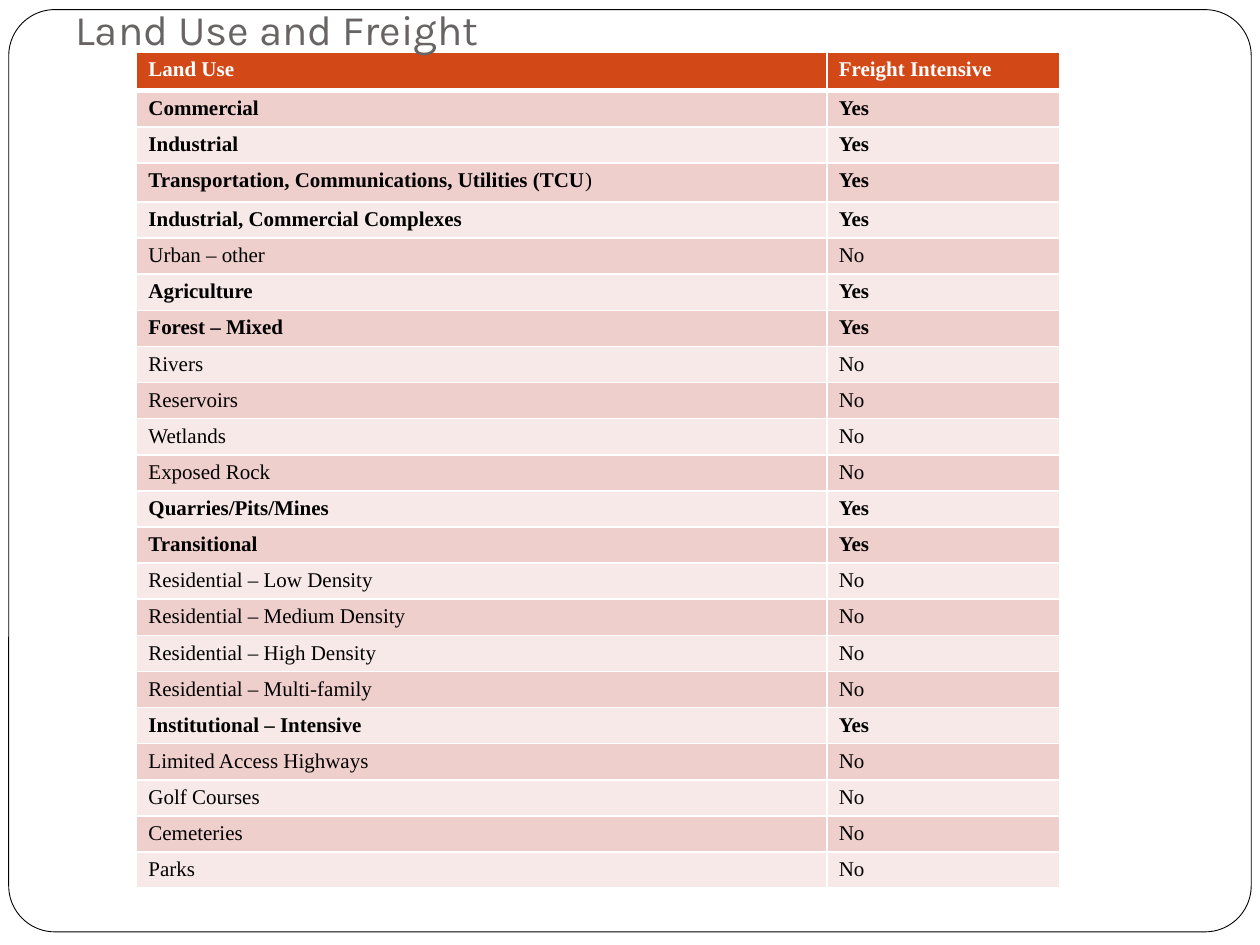
from pptx import Presentation
from pptx.dml.color import RGBColor
from pptx.enum.shapes import MSO_SHAPE
from pptx.enum.text import MSO_ANCHOR
from pptx.oxml import parse_xml
from pptx.oxml.ns import nsdecls
from pptx.util import Pt

WHITE, BLACK = "FFFFFF", "000000"
HEAD, BANDS = "D34817", ("EFCFCC", "F7E9E8")
HIGH, LOW = 22.3, 20.66
TCU = "Transportation, Communications, Utilities (TCU"
USES = [
    ("Commercial", True),
    ("Industrial", True),
    (TCU, True),
    ("Industrial, Commercial Complexes", True),
    ("Urban – other", False),
    ("Agriculture", True),
    ("Forest – Mixed", True),
    ("Rivers", False),
    ("Reservoirs", False),
    ("Wetlands", False),
    ("Exposed Rock", False),
    ("Quarries/Pits/Mines", True),
    ("Transitional", True),
    ("Residential – Low Density", False),
    ("Residential – Medium Density", False),
    ("Residential – High Density", False),
    ("Residential – Multi-family", False),
    ("Institutional – Intensive", True),
    ("Limited Access Highways", False),
    ("Golf Courses", False),
    ("Cemeteries", False),
    ("Parks", False),
]


def color(code):
    return RGBColor.from_string(code)


def paint(fill, code):
    fill.solid()
    fill.fore_color.rgb = color(code)


def assign(item, values):
    for name, value in values.items():
        setattr(item, name, value)


def add_run(para, text, code, **look):
    run = para.add_run()
    run.text = text
    assign(run.font, look)
    run.font.color.rgb = color(code)


def add_frame(slide):
    frame = slide.shapes.add_shape(
        MSO_SHAPE.ROUNDED_RECTANGLE, Pt(5), Pt(5.5), Pt(710), Pt(527))
    frame.adjustments[0] = 0.05
    frame.shadow.inherit = False
    paint(frame.fill, WHITE)
    paint(frame.line.fill, BLACK)
    frame.line.width = Pt(0.5)


def add_title(slide, text):
    box = slide.shapes.add_textbox(Pt(36), Pt(18), Pt(648), Pt(20))
    assign(box.text_frame, {
        "word_wrap": True, "vertical_anchor": MSO_ANCHOR.BOTTOM,
        "margin_left": Pt(7.2), "margin_right": Pt(7.2),
        "margin_top": Pt(3.6), "margin_bottom": Pt(7.2)})
    add_run(box.text_frame.paragraphs[0], text, "696464",
            name="Karla", size=Pt(24))


def add_edges(cell, base):
    """Draw white cell borders, with the bottom one base points wide."""
    props = cell._tc.get_or_add_tcPr()
    for spot, (side, width) in enumerate(
            [("L", 1), ("R", 1), ("T", 1), ("B", base)]):
        props.insert(spot, parse_xml(
            f'<a:ln{side} {nsdecls("a")} w="{Pt(width)}"><a:solidFill>'
            f'<a:srgbClr val="{WHITE}"/></a:solidFill></a:ln{side}>'))


def fill_cell(cell, text, fill, code, bold, base=1):
    assign(cell, {"margin_left": Pt(6.84), "margin_right": Pt(6.84),
                  "margin_top": Pt(3.42), "margin_bottom": Pt(3.42)})
    paint(cell.fill, fill)
    add_edges(cell, base)
    look = {"name": "Times New Roman", "size": Pt(12)}
    para = cell.text_frame.paragraphs[0]
    add_run(para, text, code, bold=bold, **look)
    if text == TCU:
        add_run(para, ")", code, bold=False, **look)


def add_uses(slide):
    sizes = [HIGH] + [HIGH if use == TCU else LOW for use, _ in USES]
    table = slide.shapes.add_table(
        len(sizes), 2, Pt(78), Pt(29.6), Pt(527.5), Pt(sum(sizes))).table
    for col, width in zip(table.columns, (394.5, 133)):
        col.width = Pt(width)
    for row, size in zip(table.rows, sizes):
        row.height = Pt(size)
    for col, text in enumerate(("Land Use", "Freight Intensive")):
        fill_cell(table.cell(0, col), text, HEAD, WHITE, True, base=3)
    for row, (use, heavy) in enumerate(USES, 1):
        for col, text in enumerate((use, "Yes" if heavy else "No")):
            fill_cell(table.cell(row, col), text,
                      BANDS[(row - 1) % 2], BLACK, heavy)


def main():
    deck = Presentation()
    assign(deck, {"slide_width": Pt(720), "slide_height": Pt(540)})
    slide = deck.slides.add_slide(deck.slide_layouts[6])
    add_frame(slide)
    add_uses(slide)
    add_title(slide, "Land Use and Freight")
    deck.save("out.pptx")


if __name__ == "__main__":
    main()
